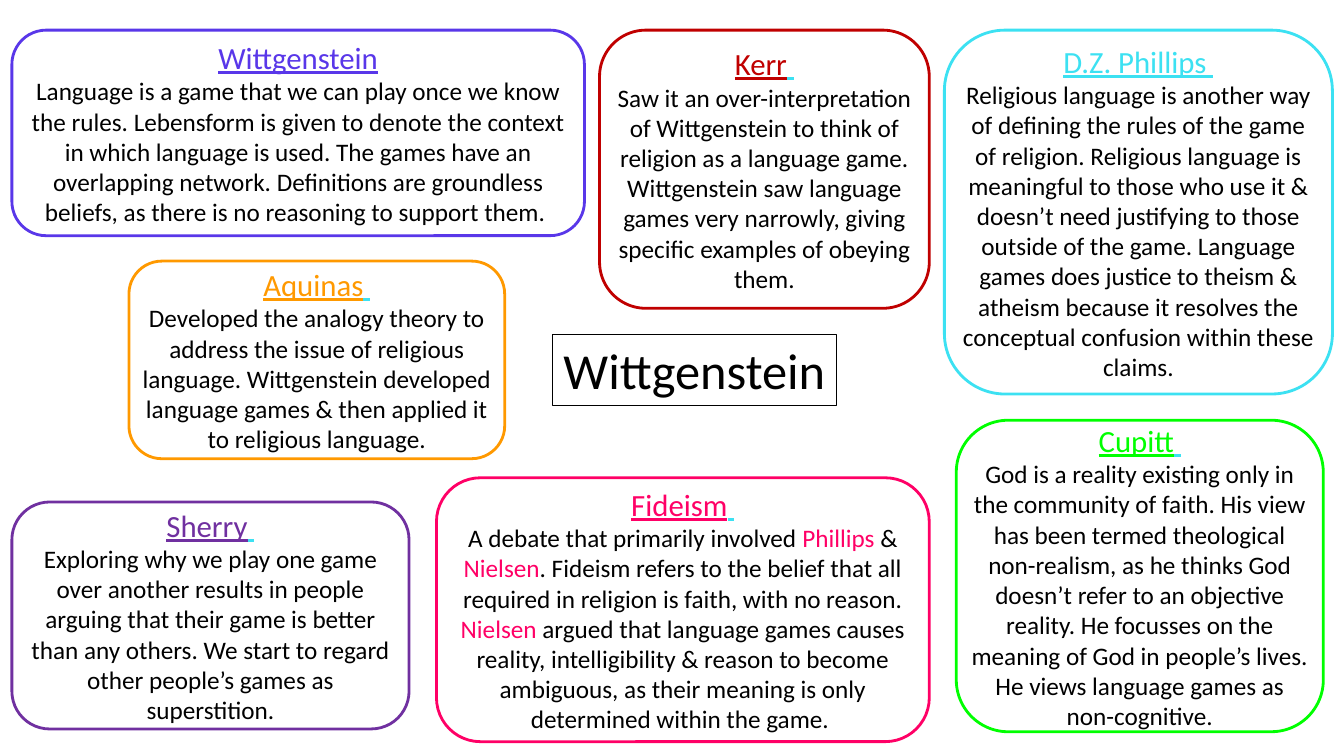
"""Build a one-slide overview of Wittgenstein's language games and responses to them."""
from pptx import Presentation
from pptx.dml.color import RGBColor
from pptx.enum.shapes import MSO_SHAPE
from pptx.enum.text import MSO_ANCHOR, PP_ALIGN
from pptx.util import Cm, Pt

BLACK = RGBColor(0x00, 0x00, 0x00)
INDIGO = RGBColor(0x59, 0x37, 0xE9)
SKY = RGBColor(0x3C, 0xE1, 0xF2)
GREEN = RGBColor(0x00, 0xFF, 0x00)
ORANGE = RGBColor(0xFF, 0x99, 0x00)
RED = RGBColor(0xC0, 0x00, 0x00)
PINK = RGBColor(0xFF, 0x00, 0x66)
PURPLE = RGBColor(0x70, 0x30, 0xA0)

THINKERS = [
    ("Wittgenstein", "", INDIGO, (0.3, 0.76, 14.43, 5.18), [
        "Language is a game that we can play once we know the rules. Lebensform is given to "
        "denote the context in which language is used. The games have an overlapping network. "
        "Definitions are groundless beliefs, as there is no reasoning to support them. "]),
    ("D.Z. Phillips", " ", SKY, (23.8, 0.76, 9.78, 9.17), [
        "Religious language is another way of defining the rules of the game of religion. "
        "Religious language is meaningful to those who use it & doesn’t need justifying to "
        "those outside of the game. Language games does justice to theism & atheism because "
        "it resolves the conceptual confusion within these claims."]),
    ("Cupitt", " ", GREEN, (24.1, 10.59, 9.25, 7.85), [
        "God is a reality existing only in the community of faith. His view has been termed "
        "theological non-realism, as he thinks God doesn’t refer to an objective reality. He "
        "focusses on the meaning of God in people’s lives. He views language games as "
        "non-cognitive."]),
    ("Aquinas", " ", ORANGE, (3.25, 6.58, 9.47, 4.98), [
        "Developed the analogy theory to address the issue of religious language. Wittgenstein "
        "developed language games & then applied it to religious language."]),
    ("Kerr", " ", RED, (15.11, 0.76, 8.31, 7.01), [
        "Saw it an over-interpretation of Wittgenstein to think of religion as a language game. "
        "Wittgenstein saw language games very narrowly, giving specific examples of obeying "
        "them."]),
    ("Fideism", " ", PINK, (11, 12.04, 12.42, 6.65), [
        "A debate that primarily involved ", "Phillips", " & ", "Nielsen",
        ". Fideism refers to the belief that all required in religion is faith, with no reason. ",
        "Nielsen",
        " argued that language games causes reality, intelligibility & reason to become "
        "ambiguous, as their meaning is only determined within the game. "]),
    ("Sherry", " ", PURPLE, (0.3, 12.65, 10.01, 5.72), [
        "Exploring why we play one game over another results in people arguing that their game "
        "is better than any others. We start to regard other people’s games as superstition."]),
]


def add_outline(kind, box, color, width):
    sp = s.shapes.add_shape(kind, *[Cm(v) for v in box])
    sp.shadow.inherit = False
    sp.fill.background()
    sp.line.color.rgb = color
    sp.line.width = Pt(width)
    sp.text_frame.word_wrap = True
    return sp.text_frame


def add_run(p, text, size, color, underline=False):
    p.alignment = PP_ALIGN.CENTER
    r = p.add_run()
    r.text = text
    r.font.name = "Calibri"
    r.font.size = Pt(size)
    r.font.color.rgb = color
    r.font.underline = underline


prs = Presentation()
prs.slide_width, prs.slide_height = Cm(33.87), Cm(19.05)
s = prs.slides.add_slide(prs.slide_layouts[6])

tf = add_outline(MSO_SHAPE.RECTANGLE, (13.92, 8.43, 7.16, 1.8), BLACK, 0.75)
tf.vertical_anchor = MSO_ANCHOR.TOP
add_run(tf.paragraphs[0], "Wittgenstein ", 36, BLACK)

for name, gap, color, box, body in THINKERS:
    tf = add_outline(MSO_SHAPE.ROUNDED_RECTANGLE, box, color, 2)
    tf.vertical_anchor = MSO_ANCHOR.MIDDLE
    tf.margin_left = tf.margin_right = tf.margin_top = tf.margin_bottom = 0
    p = tf.paragraphs[0]
    add_run(p, name, 22, color, True)
    if gap:
        add_run(p, gap, 22, SKY, True)
    p = tf.add_paragraph()
    for i, text in enumerate(body):
        add_run(p, text, 18, color if i % 2 else BLACK)

prs.save("out.pptx")
